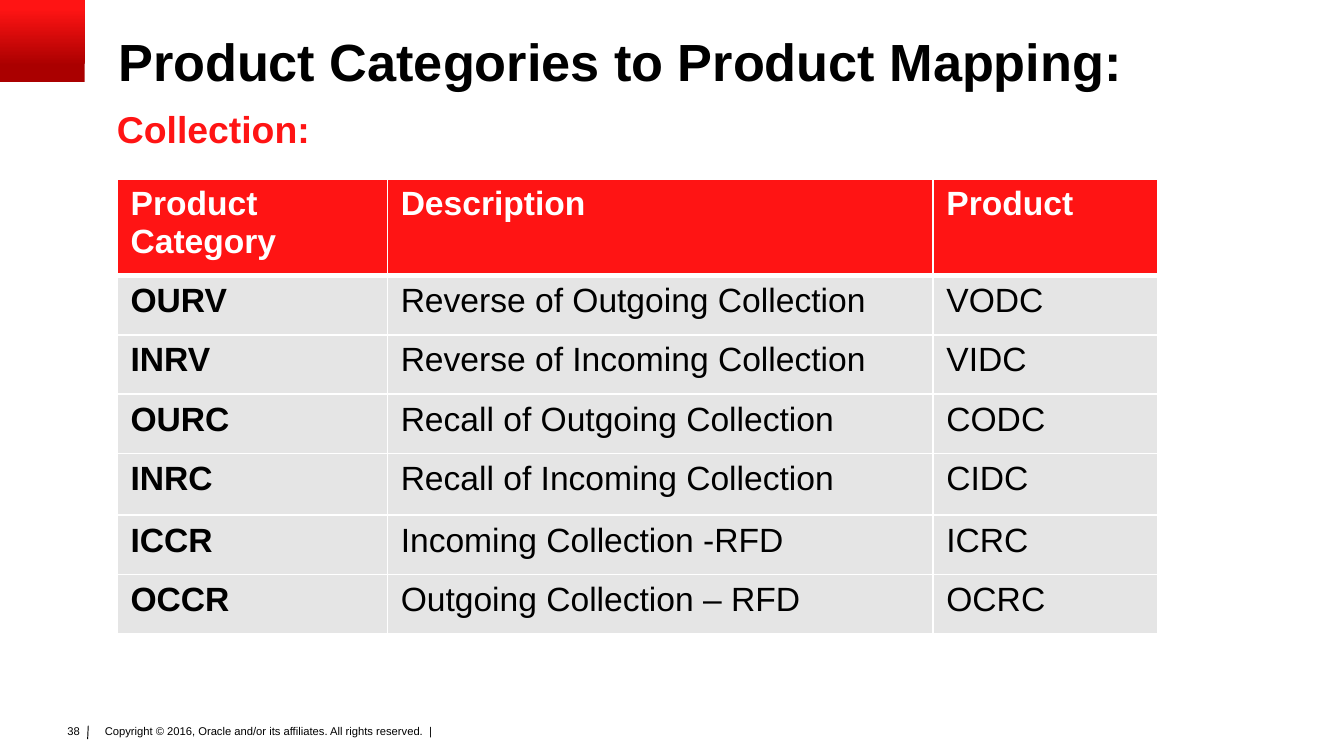
from pptx import Presentation
from pptx.dml.color import RGBColor
from pptx.enum.shapes import MSO_CONNECTOR, MSO_SHAPE
from pptx.enum.text import MSO_ANCHOR, PP_ALIGN
from pptx.oxml.ns import qn
from pptx.util import Inches, Pt
from lxml.etree import SubElement

BLACK = RGBColor(0x00, 0x00, 0x00)
WHITE = RGBColor(0xFF, 0xFF, 0xFF)
RED = RGBColor(0xFF, 0x14, 0x14)
DARK = RGBColor(0xAA, 0x00, 0x00)
GREY = RGBColor(0xE5, 0xE5, 0xE5)

deck = Presentation()
deck.slide_width = Inches(10)
deck.slide_height = deck.slide_width * 9 // 16
slide = deck.slides.add_slide(deck.slide_layouts[5])
shapes = slide.shapes
wide = deck.slide_width / 100
high = deck.slide_height / 100


def place(left, top, width, height):
    return int(left * wide), int(top * high), int(width * wide), int(height * high)


def write(frame, text, size, color, bold=False, inset=None):
    frame.text = text
    if inset:
        frame.margin_left = frame.margin_right = Inches(inset[0])
        frame.margin_top = frame.margin_bottom = Inches(inset[1])
    para = frame.paragraphs[0]
    font = para.font
    font.name, font.size, font.bold = "Arial", Pt(size), bold
    font.color.rgb = color
    return para


note = shapes.add_textbox(*place(7.4, 95.47, 65.3, 4.27)).text_frame
note.word_wrap = True
write(note, "Copyright © 2016, Oracle and/or its affiliates. All rights reserved.  |",
      6, BLACK, inset=(0.04, 0.02))

left, top, width, height = place(6.57, 96, -0.05, 1.78)
rule = shapes.add_connector(MSO_CONNECTOR.STRAIGHT, left, top, left + width, top + height)
rule.line.color.rgb = BLACK
rule.line.width = Pt(0.5)
SubElement(rule._element.spPr, qn("a:effectLst"))

page = shapes.add_textbox(*place(3.93, 94.93, 3, 3.56)).text_frame
page.word_wrap = False
write(page, "38", 6, BLACK).alignment = PP_ALIGN.RIGHT

block = shapes.add_shape(MSO_SHAPE.RECTANGLE, *place(0, 0, 6.3, 10.84))
block.shadow.inherit = False
block.line.fill.background()
block.fill.gradient()
block.fill.gradient_angle = 90
for stop, spot, color in zip(block.fill.gradient_stops, (0.2, 0.9), (DARK, RED)):
    stop.position = spot
    stop.color.rgb = color

title = shapes.title
title.left, title.top, title.width, title.height = place(8.8, 4.8, 90, 8.53)
title.text_frame.vertical_anchor = MSO_ANCHOR.TOP
head = write(title.text_frame, "Product Categories to Product Mapping:", 28, BLACK, True, (0, 0))
head.alignment = PP_ALIGN.LEFT
head.line_spacing = 0.9

rows = [
    ("Product Category", "Description", "Product"),
    ("OURV", "Reverse of Outgoing Collection", "VODC"),
    ("INRV", "Reverse of Incoming Collection", "VIDC"),
    ("OURC", "Recall of Outgoing Collection", "CODC"),
    ("INRC", "Recall of Incoming Collection", "CIDC"),
    ("ICCR", "Incoming Collection -RFD", "ICRC"),
    ("OCCR", "Outgoing Collection – RFD", "OCRC"),
]
table = shapes.add_table(len(rows), 3, *place(8.72, 23.64, 77.4, 60.09)).table
for col, share in zip(table.columns, (20.1, 40.6, 16.75)):
    col.width = int(share * wide)
for row, share in zip(table.rows, (12.8, 7.85, 7.85, 7.85, 8.18, 7.85, 7.85)):
    row.height = int(share * high)
for i, texts in enumerate(rows):
    for j, text in enumerate(texts):
        cell = table.cell(i, j)
        props = cell._tc.get_or_add_tcPr()
        for side in ("L", "R", "T", "B"):
            thick = 3 if (i, side) in ((0, "B"), (1, "T")) else 1
            edge = SubElement(props, qn("a:ln" + side), w=str(Pt(thick)))
            paint = SubElement(edge, qn("a:solidFill"))
            SubElement(paint, qn("a:srgbClr"), val=str(WHITE))
        cell.fill.solid()
        cell.fill.fore_color.rgb = GREY if i else RED
        write(cell.text_frame, text, 18, BLACK if i else WHITE, i == 0 or j == 0)

label = shapes.add_textbox(*place(8.7, 14.04, 90, 5.87)).text_frame
label.word_wrap = True
write(label, "Collection:", 20, RED, True, (0, 0))

deck.save("out.pptx")
